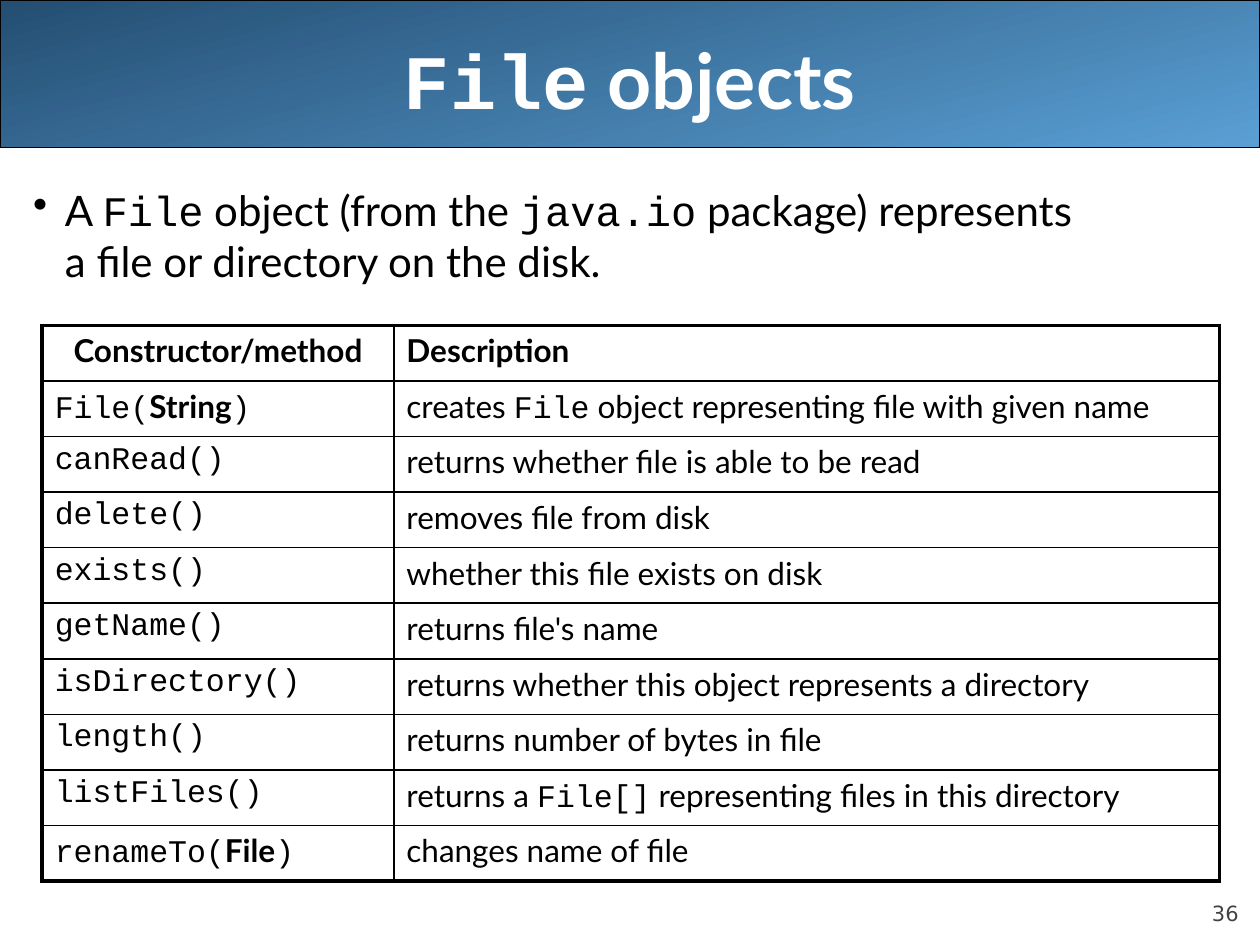
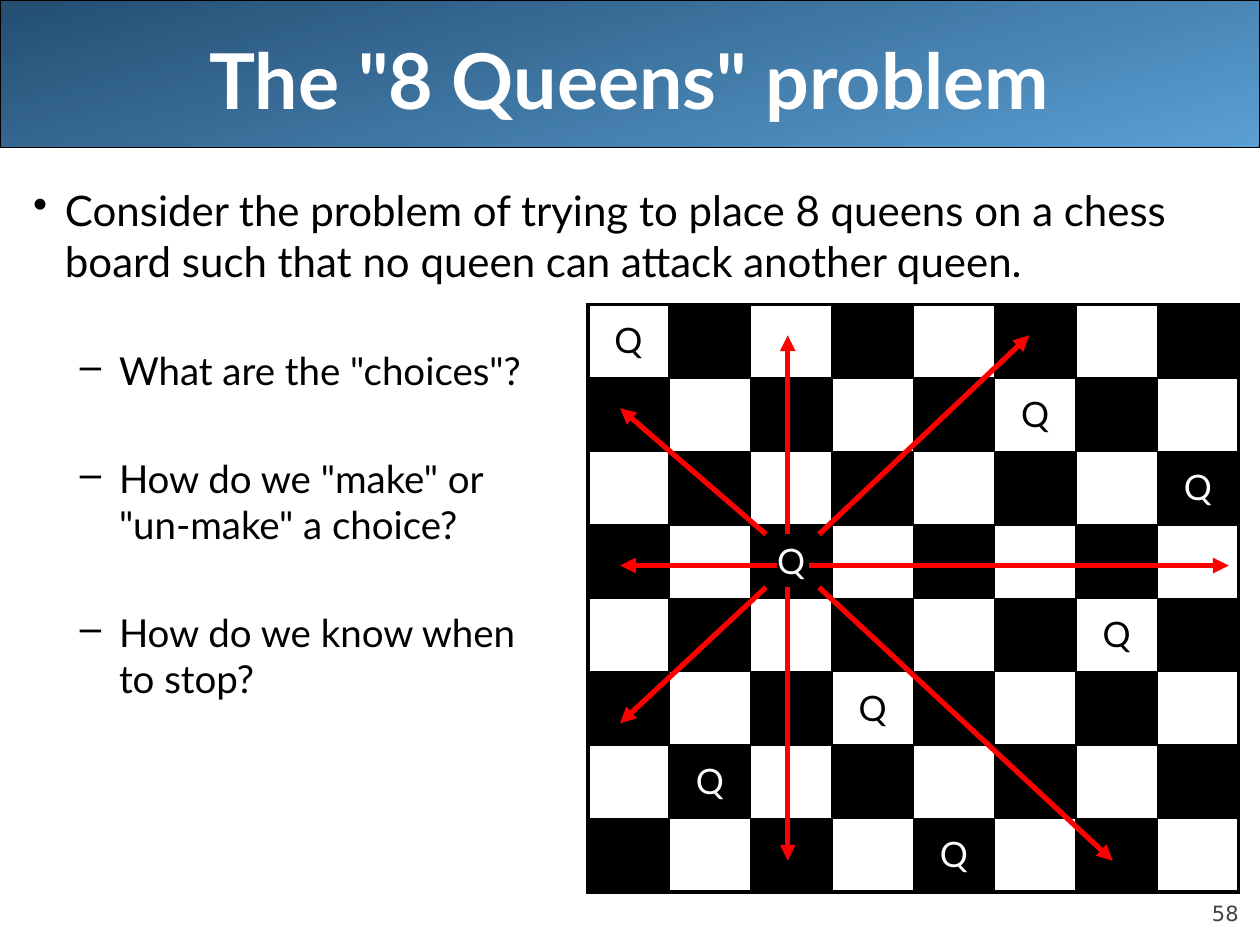
from lxml import etree
from pptx import Presentation
from pptx.dml.color import RGBColor
from pptx.enum.shapes import MSO_CONNECTOR, MSO_SHAPE
from pptx.enum.text import MSO_ANCHOR, PP_ALIGN
from pptx.oxml.ns import qn
from pptx.util import Cm, Pt

BLACK = RGBColor(0, 0, 0)
WHITE = RGBColor(255, 255, 255)
RED = RGBColor(255, 0, 0)
GRAY = RGBColor(0x42, 0x42, 0x42)
NAVY = RGBColor(0x24, 0x4E, 0x72)
SKY = RGBColor(0x5A, 0x9F, 0xD4)
SANS, MONO, DIGIT = "Lato", "Courier New", "DejaVu Sans"
LEFT, MID, RIGHT = PP_ALIGN.LEFT, PP_ALIGN.CENTER, PP_ALIGN.RIGHT
CENTER, BOTTOM = MSO_ANCHOR.MIDDLE, MSO_ANCHOR.BOTTOM
ROUND = MSO_SHAPE.ROUNDED_RECTANGLE
STRAIGHT = MSO_CONNECTOR.STRAIGHT
THICK, THIN = Pt(2.25), Pt(1)

METHODS = [
    ("Constructor/method", "Description"),
    ("`File(`String`)`", "creates `File` object representing file with given name"),
    ("`canRead()`", "returns whether file is able to be read"),
    ("`delete()`", "removes file from disk"),
    ("`exists()`", "whether this file exists on disk"),
    ("`getName()`", "returns file's name"),
    ("`isDirectory()`", "returns whether this object represents a directory"),
    ("`length()`", "returns number of bytes in file"),
    ("`listFiles()`", "returns a `File[]` representing files in this directory"),
    ("`renameTo(`File`)`", "changes name of file"),
]
QUEENS = [0, 5, 7, 2, 6, 3, 1, 4]
MOVES = [
    (15.88, 10.77, 15.88, 6.76),
    (15.88, 11.84, 15.88, 17.35),
    (16.31, 11.4, 24.77, 11.4),
    (15.67, 11.4, 12.5, 11.4),
    (15.44, 10.77, 12.5, 8.23),
    (15.44, 11.84, 12.5, 14.58),
    (16.51, 11.84, 22.43, 17.35),
    (16.51, 10.77, 20.75, 6.76),
]


def add_node(parent, tag, **attrs):
    return etree.SubElement(parent, qn(tag), **attrs)


def write(par, text, size, color=BLACK, bold=False, mono_bold=False,
          face=SANS, align=LEFT):
    """Parts of the text between backticks are set as code."""
    par.alignment = align
    font = par.font
    font.name, font.size, font.bold = face, Pt(size), bold
    font.color.rgb = color
    for i, part in enumerate(text.split("`")):
        for j, line in enumerate(part.split("\n")):
            if j:
                par.add_line_break()
            if line:
                run = par.add_run()
                run.text = line
                if i % 2:
                    run.font.name = MONO
                    run.font.bold = mono_bold


def add_box(slide, left, top, width, height, anchor=None):
    box = slide.shapes.add_textbox(Cm(left), Cm(top), Cm(width), Cm(height))
    frame = box.text_frame
    frame.word_wrap = True
    if anchor is not None:
        frame.vertical_anchor = anchor
    return frame


def add_band(slide):
    band = slide.shapes.add_shape(ROUND, 0, 0, Cm(25.4), Cm(2.97))
    band.adjustments[0] = 0
    band.shadow.inherit = False
    band.fill.gradient()
    band.fill.gradient_angle = 285
    for stop, color in zip(band.fill.gradient_stops, (NAVY, SKY)):
        stop.color.rgb = color
    band.line.color.rgb = BLACK
    band.line.width = Pt(0.75)


def add_page(deck, title, number):
    slide = deck.slides.add_slide(deck.slide_layouts[6])
    add_band(slide)
    foot = add_box(slide, 22.86, 17.65, 2.11, 1.02, BOTTOM)
    foot.margin_left = foot.margin_right = 0
    foot.margin_top = foot.margin_bottom = 0
    write(foot.paragraphs[0], number, 12, GRAY, face=DIGIT, align=RIGHT)
    head = add_box(slide, 1.27, 0, 22.86, 3.18, CENTER)
    write(head.paragraphs[0], title, 44, WHITE, True, True, align=MID)
    return slide


def set_bullet(par, mark, left, hang):
    props = par._p.get_or_add_pPr()
    props.set("marL", str(Cm(left)))
    props.set("indent", str(-Cm(hang)))
    add_node(props, "a:buChar", char=mark)


def add_body(slide, lead, points=()):
    frame = add_box(slide, 0.42, 3.6, 24.97, 14.4)
    par = frame.paragraphs[0]
    set_bullet(par, "•", 0.64, 0.64)
    write(par, lead, 24)
    for point in points:
        par = frame.add_paragraph()
        par.level = 1
        set_bullet(par, "–", 1.73, 0.79)
        par.space_before = Pt(35.2)
        write(par, point, 22)


def add_grid(slide, left, top, widths, height, count):
    frame = slide.shapes.add_table(
        count, len(widths), Cm(left), Cm(top),
        Cm(sum(widths)), Cm(height * count))
    table = frame.table
    table.first_row = table.horz_banding = False
    for style in frame.element.xpath(".//a:tableStyleId"):
        style.getparent().remove(style)
    for col, width in zip(table.columns, widths):
        col.width = Cm(width)
    for r, row in enumerate(table.rows):
        row.height = Cm(height)
        for c, cell in enumerate(row.cells):
            set_border(cell, L=c == 0, R=c == len(widths) - 1,
                       T=r == 0, B=r == count - 1)
    return table


def set_border(cell, **sides):
    props = cell._tc.get_or_add_tcPr()
    for side, outer in sides.items():
        line = add_node(props, "a:ln" + side, w=str(THICK if outer else THIN))
        fill = add_node(line, "a:solidFill")
        add_node(fill, "a:srgbClr", val=str(BLACK))


def paint(cell, color):
    cell.fill.solid()
    cell.fill.fore_color.rgb = color


def add_methods(slide):
    table = add_grid(slide, 0.85, 6.56, (7.09, 16.64), 1.12, len(METHODS))
    for r, row in enumerate(METHODS):
        for c, text in enumerate(row):
            cell = table.cell(r, c)
            paint(cell, WHITE)
            head = r == 0
            write(cell.text_frame.paragraphs[0], text, 18,
                  bold=head or c == 0, align=MID if head and c == 0 else LEFT)


def add_board(slide):
    size = len(QUEENS)
    table = add_grid(slide, 11.85, 6.14, [1.64] * size, 1.48, size)
    for r, queen in enumerate(QUEENS):
        for c in range(size):
            cell = table.cell(r, c)
            dark = (r + c) % 2
            if dark:
                paint(cell, BLACK)
            else:
                cell.fill.background()
            if c == queen:
                par = cell.text_frame.paragraphs[0]
                par.line_spacing = 1.2
                write(par, "Q", 20, WHITE if dark else BLACK, align=MID)


def add_arrow(group, *ends):
    arrow = group.shapes.add_connector(STRAIGHT, *(Cm(end) for end in ends))
    arrow.line.color.rgb = RED
    arrow.line.width = Pt(3)
    add_node(arrow.line._get_or_add_ln(), "a:tailEnd", type="triangle")
    add_node(arrow._element.spPr, "a:effectLst")


def main():
    deck = Presentation()
    deck.slide_width, deck.slide_height = Cm(25.4), Cm(19.05)

    files = add_page(deck, "`File` objects", "36")
    add_body(files, "A `File` object (from the `java.io` package) represents\n"
                    "a file or directory on the disk.")
    add_methods(files)

    chess = add_page(deck, 'The "8 Queens" problem', "58")
    add_body(chess, "Consider the problem of trying to place 8 queens on a "
                    "chess board such that no queen can attack another queen.",
             ['What are the "choices"?',
              'How do we "make" or\n"un-make" a choice?',
              "How do we know when\nto stop?"])
    add_board(chess)
    group = chess.shapes.add_group_shape()
    for move in MOVES:
        add_arrow(group, *move)

    deck.save("out.pptx")


if __name__ == "__main__":
    main()
